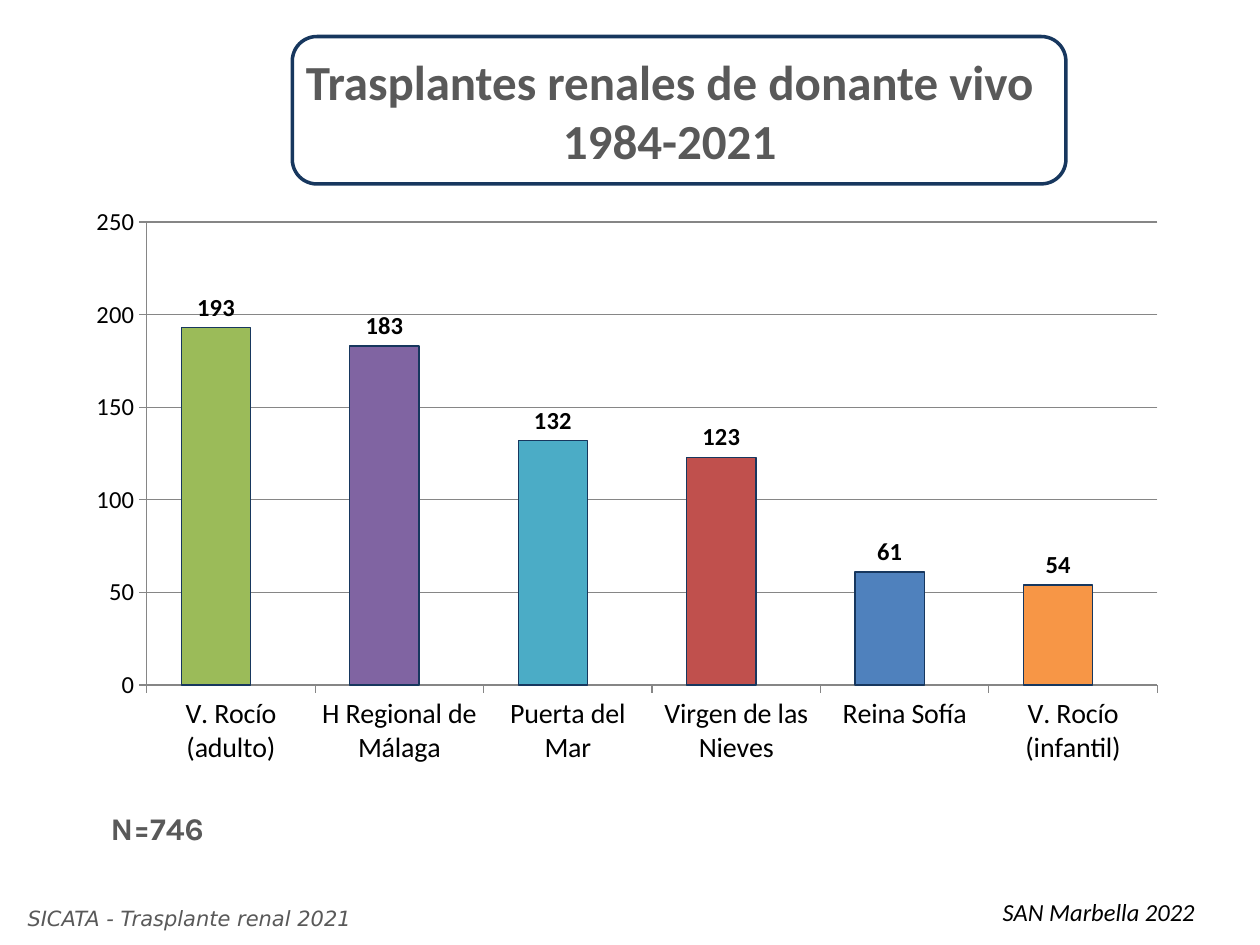
from dataclasses import dataclass

from pptx import Presentation
from pptx.chart.data import CategoryChartData
from pptx.dml.color import RGBColor
from pptx.enum import chart as ch, shapes, text
from pptx.util import Inches, Pt


@dataclass(frozen=True)
class Theme:
    font: str = "Calibri"
    black: str = "000000"
    grey: str = "595959"
    navy: str = "17375E"
    axis: str = "868686"
    blue: str = "4F81BD"
    red: str = "C0504D"
    title_size: int = 28
    total_size: int = 18
    category_size: int = 16
    value_size: int = 14
    source_size: int = 12


@dataclass(frozen=True)
class Hospital:
    name: str
    transplants: int
    color: str


@dataclass(frozen=True)
class Note:
    wording: str
    box: tuple[float, float, float, float]
    font: str
    size: int
    color: str
    bold: bool = False
    italic: bool = False
    wrap: bool = True


THEME = Theme()
HOSPITALS = [
    Hospital("V. Rocío (adulto)", 193, "9BBB59"),
    Hospital("H Regional de Málaga", 183, "8064A2"),
    Hospital("Puerta del Mar", 132, "4BACC6"),
    Hospital("Virgen de las Nieves", 123, THEME.red),
    Hospital("Reina Sofía", 61, THEME.blue),
    Hospital("V. Rocío (infantil)", 54, "F79646"),
]
NOTES = [
    Note("N=746", (0.78, 6.37, 1.09, 0.4), "Karla", THEME.total_size,
         THEME.grey, bold=True, wrap=False),
    Note("SICATA - Trasplante renal 2021", (0.12, 7.14, 2.99, 0.3),
         "DejaVu Sans", THEME.source_size, THEME.grey, italic=True),
    Note("SAN Marbella 2022", (7.86, 7.07, 1.97, 0.34), THEME.font,
         THEME.value_size, THEME.black, italic=True),
]
TITLE_LINES = ["Trasplantes renales de donante vivo", "1984-2021"]


def rgb(color: str) -> RGBColor:
    return RGBColor.from_string(color)


def style_font(font, name: str, size: int, color: str,
               bold: bool = False, italic: bool = False) -> None:
    font.name = name
    font.size = Pt(size)
    font.color.rgb = rgb(color)
    font.bold = bold
    font.italic = italic


def style_line(line, color: str, width: float) -> None:
    line.color.rgb = rgb(color)
    line.width = Pt(width)


def paint_bar(bar_format, color: str) -> None:
    bar_format.fill.solid()
    bar_format.fill.fore_color.rgb = rgb(color)
    style_line(bar_format.line, THEME.navy, 0.75)


def add_hospital_chart(slide) -> None:
    data = CategoryChartData()
    data.categories = [hospital.name for hospital in HOSPITALS]
    data.add_series("Series 1", [hospital.transplants for hospital in HOSPITALS])
    data.add_series("Series 2", [None] * len(HOSPITALS))
    chart = slide.shapes.add_chart(
        ch.XL_CHART_TYPE.COLUMN_CLUSTERED,
        Inches(0.59), Inches(1.55), Inches(8.77), Inches(4.62), data).chart
    chart.has_legend = False
    chart.has_title = False
    style_font(chart.font, THEME.font, THEME.total_size, THEME.black)

    plot = chart.plots[0]
    plot.gap_width = 100
    plot.overlap = 57
    plot.vary_by_categories = False
    transplants, empty = plot.series
    paint_bar(transplants.format, THEME.blue)
    paint_bar(empty.format, THEME.red)
    for index, hospital in enumerate(HOSPITALS):
        paint_bar(transplants.points[index].format, hospital.color)

    labels = transplants.data_labels
    labels.show_value = True
    labels.position = ch.XL_LABEL_POSITION.OUTSIDE_END
    style_font(labels.font, THEME.font, THEME.value_size, THEME.black, bold=True)

    for axis, size in ((chart.category_axis, THEME.category_size),
                       (chart.value_axis, THEME.value_size)):
        style_font(axis.tick_labels.font, THEME.font, size, THEME.black)
        axis.major_tick_mark = ch.XL_TICK_MARK.OUTSIDE
        style_line(axis.format.line, THEME.axis, 0.75)
    counts = chart.value_axis
    counts.minimum_scale, counts.maximum_scale, counts.major_unit = 0, 250, 50
    counts.has_major_gridlines = True
    style_line(counts.major_gridlines.format.line, THEME.axis, 0.75)


def add_title(slide) -> None:
    title = slide.shapes.title
    title.left, title.top = Inches(2.01), Inches(0.36)
    title.width, title.height = Inches(6.61), Inches(1.04)
    frame = title.text_frame
    frame.auto_size = text.MSO_AUTO_SIZE.NONE
    frame.vertical_anchor = text.MSO_ANCHOR.TOP
    for index, wording in enumerate(TITLE_LINES):
        paragraph = frame.add_paragraph() if index else frame.paragraphs[0]
        paragraph.alignment = text.PP_ALIGN.CENTER
        paragraph.space_before = Pt(0)
        run = paragraph.add_run()
        run.text = wording
        style_font(run.font, THEME.font, THEME.title_size, THEME.grey, bold=True)


def add_title_frame(slide) -> None:
    frame = slide.shapes.add_shape(
        shapes.MSO_SHAPE.ROUNDED_RECTANGLE,
        Inches(2.32), Inches(0.29), Inches(6.14), Inches(1.17))
    frame.shadow.inherit = False
    frame.fill.background()
    style_line(frame.line, THEME.navy, 2)


def add_note(slide, note: Note) -> None:
    frame = slide.shapes.add_textbox(*map(Inches, note.box)).text_frame
    frame.word_wrap = note.wrap
    frame.auto_size = text.MSO_AUTO_SIZE.SHAPE_TO_FIT_TEXT
    run = frame.paragraphs[0].add_run()
    run.text = note.wording
    style_font(run.font, note.font, note.size, note.color, note.bold, note.italic)


def main() -> None:
    deck = Presentation()
    deck.slide_width, deck.slide_height = Inches(10), Inches(7.5)
    title_only = deck.slide_layouts[5]
    slide = deck.slides.add_slide(title_only)
    add_hospital_chart(slide)
    add_title(slide)
    add_title_frame(slide)
    for note in NOTES:
        add_note(slide, note)
    deck.save("out.pptx")


if __name__ == "__main__":
    main()
